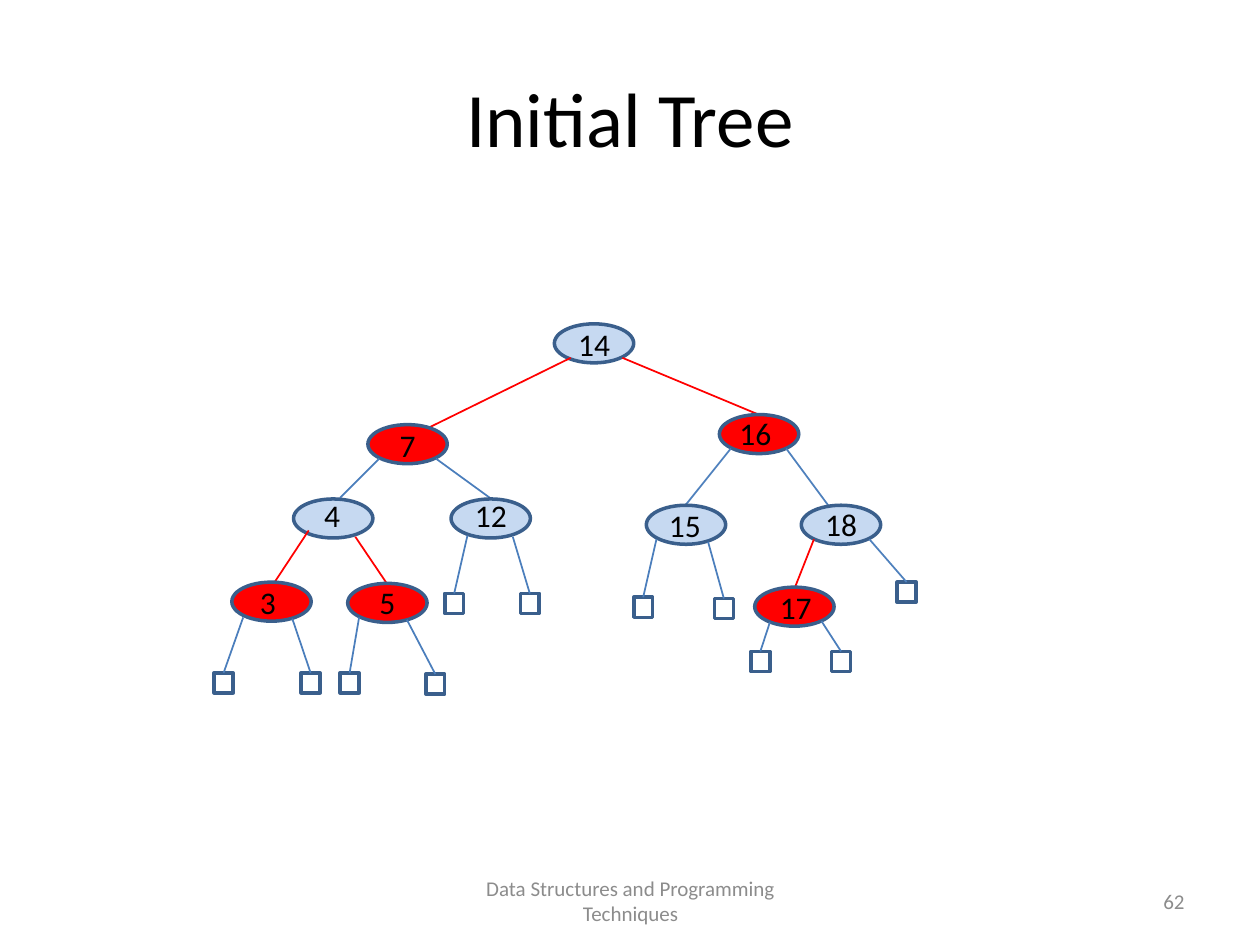
from pptx import Presentation
from pptx.dml.color import RGBColor
from pptx.enum.shapes import MSO_CONNECTOR, MSO_SHAPE
from pptx.enum.text import MSO_ANCHOR, PP_ALIGN
from pptx.oxml.ns import qn
from pptx.util import Inches, Pt
from lxml import etree

STRAIGHT = MSO_CONNECTOR.STRAIGHT
ELLIPSE, SQUARE = MSO_SHAPE.OVAL, MSO_SHAPE.RECTANGLE
CENTER, RIGHT = PP_ALIGN.CENTER, PP_ALIGN.RIGHT
TOP, MIDDLE = MSO_ANCHOR.TOP, MSO_ANCHOR.MIDDLE

COLORS = {name: RGBColor.from_string(value) for name, value in {
    "text": "000000", "footer": "8C8C8C", "red": "FF0000", "black": "C6D9F1",
    "outline": "3A5F8C", "link": "4F81BD", "leaf link": "4B7EBC",
}.items()}

NODE_WIDTH, NODE_HEIGHT = 0.63, 0.31
LEAF_WIDTH, LEAF_HEIGHT = 0.15, 0.16
LABEL_WIDTH, LABEL_HEIGHT = 0.49, 0.4

# key, node colour, node corner, label corner, link colour, link start, link end
NODES = [
    ("14", "black", (4.4, 2.57), (4.47, 2.53), None, None, None),
    ("7", "red", (2.92, 3.37), (2.99, 3.33), "red", (4.53, 2.84), (3.31, 3.44)),
    ("16", "red", (5.71, 3.29), (5.75, 3.24), "red", (4.94, 2.84), (6.02, 3.29)),
    ("4", "black", (2.33, 3.96), (2.39, 3.89), "leaf link", (3.01, 3.64), (2.7, 3.95)),
    ("12", "black", (3.58, 3.96), (3.65, 3.89), "leaf link", (3.46, 3.64), (3.9, 3.96)),
    ("15", "black", (5.13, 4.01), (5.19, 3.97), "link", (5.8, 3.56), (5.44, 4.01)),
    ("18", "black", (6.36, 4.01), (6.43, 3.96), "link", (6.24, 3.56), (6.58, 4.02)),
    ("3", "red", (1.84, 4.62), (1.88, 4.58), "red", (2.45, 4.21), (2.18, 4.62)),
    ("5", "red", (2.76, 4.63), (2.83, 4.58), "red", (2.82, 4.26), (3.07, 4.63)),
    ("17", "red", (5.99, 4.66), (6.07, 4.62), "red", (6.46, 4.28), (6.31, 4.66)),
]

# leaf corner, link start, link colour
LEAVES = [
    ((1.7, 5.34), (1.93, 4.9), "leaf link"),
    ((2.39, 5.34), (2.32, 4.91), "leaf link"),
    ((2.7, 5.34), (2.85, 4.9), "leaf link"),
    ((3.38, 5.35), (3.23, 4.92), "leaf link"),
    ((3.53, 4.71), (3.71, 4.25), "leaf link"),
    ((4.13, 4.71), (4.07, 4.26), "leaf link"),
    ((5.03, 4.74), (5.21, 4.28), "leaf link"),
    ((5.67, 4.75), (5.62, 4.3), "leaf link"),
    ((5.96, 5.17), (6.11, 4.94), "leaf link"),
    ((6.6, 5.17), (6.52, 4.93), "leaf link"),
    ((7.12, 4.62), (6.9, 4.28), "link"),
]

deck = Presentation()
deck.slide_width, deck.slide_height = Inches(10), Inches(7.5)
page = deck.slides.add_slide(deck.slide_layouts[6])


def add_text(text, left, top, width, height, size=18, color="text",
             align=CENTER, anchor=TOP):
    box = page.shapes.add_textbox(*map(Inches, (left, top, width, height)))
    box.text_frame.word_wrap = True
    box.text_frame.vertical_anchor = anchor
    para = box.text_frame.paragraphs[0]
    para.alignment = align
    span = para.add_run()
    span.text = text
    span.font.name = "Calibri"
    span.font.size = Pt(size)
    span.font.color.rgb = COLORS[color]


def add_link(start, end, color):
    link = page.shapes.add_connector(STRAIGHT, *map(Inches, start + end))
    link.line.color.rgb = COLORS[color]
    link.line.width = Pt(1)
    etree.SubElement(link.element.spPr, qn("a:effectLst"))
    return link


add_text("Initial Tree", 0.5, 0.3, 9, 1.25, size=44, anchor=MIDDLE)
add_text("Data Structures and Programming Techniques", 3.42, 6.95, 3.17, 0.4,
         size=12, color="footer", anchor=MIDDLE)
add_text("62", 7.17, 6.95, 2.33, 0.4, size=12, color="footer", align=RIGHT,
         anchor=MIDDLE)

for key, color, corner, label, link_color, start, end in NODES:
    if link_color:
        add_link(start, end, link_color)
    node = page.shapes.add_shape(
        ELLIPSE, *map(Inches, corner + (NODE_WIDTH, NODE_HEIGHT)))
    node.shadow.inherit = False
    node.fill.solid()
    node.fill.fore_color.rgb = COLORS[color]
    node.line.color.rgb = COLORS["outline"]
    node.line.width = Pt(2)
    add_text(key, *label, LABEL_WIDTH, LABEL_HEIGHT)

for corner, start, link_color in LEAVES:
    leaf = page.shapes.add_shape(
        SQUARE, *map(Inches, corner + (LEAF_WIDTH, LEAF_HEIGHT)))
    leaf.shadow.inherit = False
    leaf.fill.background()
    leaf.line.color.rgb = COLORS["outline"]
    leaf.line.width = Pt(2)
    add_link(start, corner, link_color).end_connect(leaf, 0)

deck.save("out.pptx")
